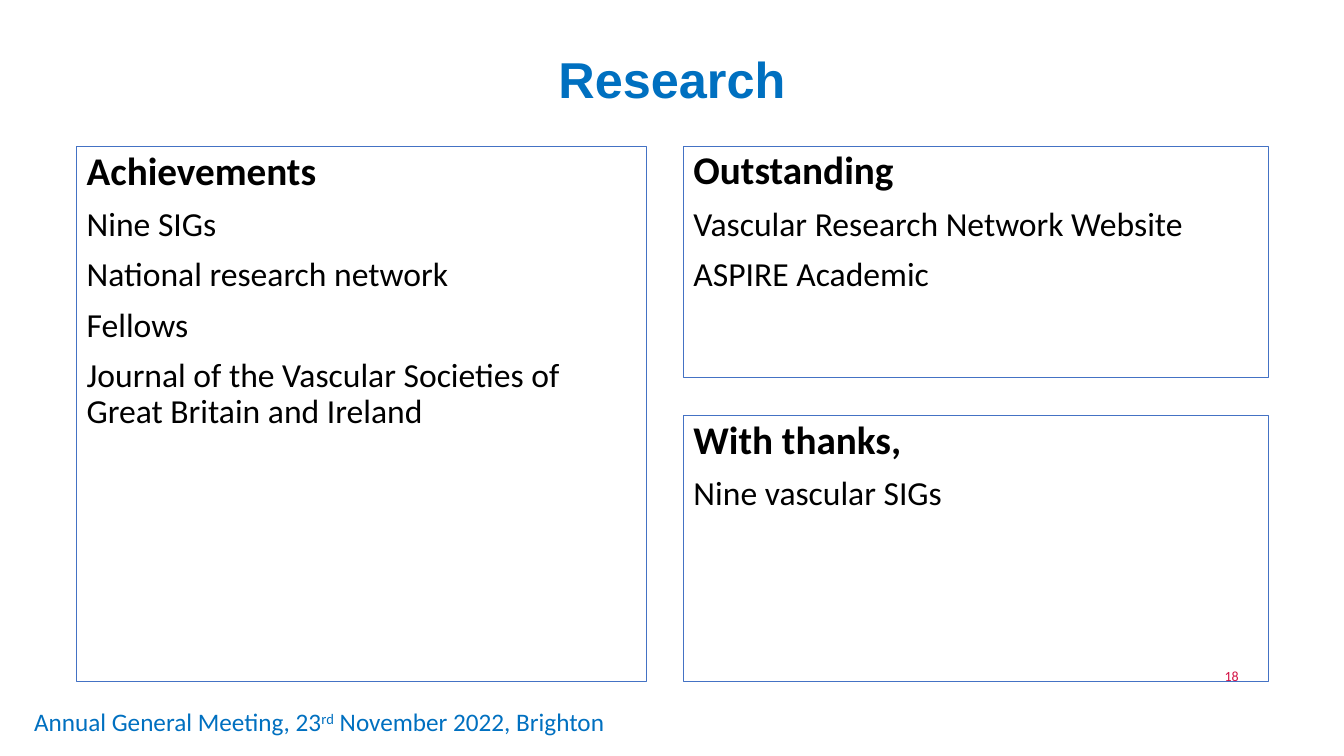
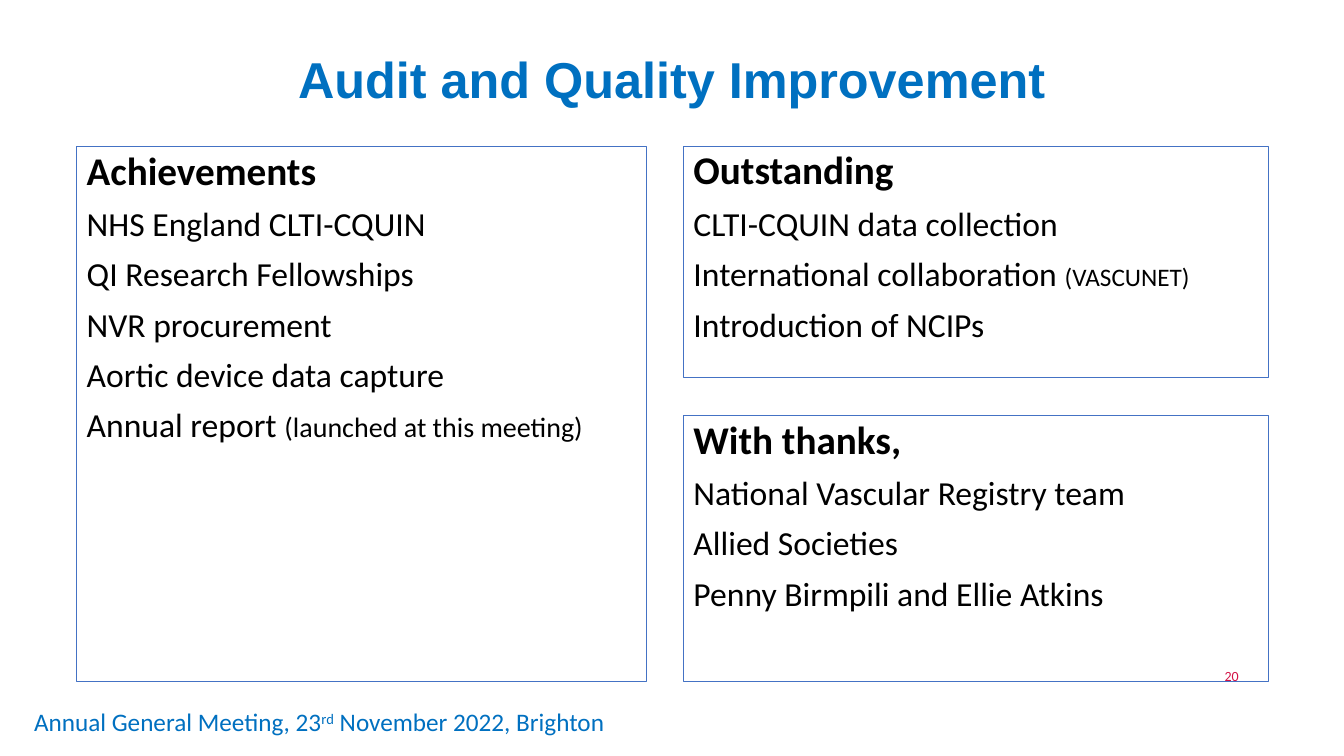
from lxml import etree
from pptx import Presentation
from pptx.dml.color import RGBColor
from pptx.enum.shapes import MSO_SHAPE
from pptx.enum.text import MSO_ANCHOR, MSO_AUTO_SIZE, PP_ALIGN
from pptx.oxml.ns import qn
from pptx.util import Emu, Pt

RECTANGLE = MSO_SHAPE.RECTANGLE
TOP, MIDDLE = MSO_ANCHOR.TOP, MSO_ANCHOR.MIDDLE
NO_FIT, GROW = MSO_AUTO_SIZE.NONE, MSO_AUTO_SIZE.SHAPE_TO_FIT_TEXT
LEFT, CENTER = PP_ALIGN.LEFT, PP_ALIGN.CENTER

BLUE = RGBColor(0x00, 0x70, 0xC0)
OUTLINE = RGBColor(0x44, 0x72, 0xC4)
RED = RGBColor(0xD3, 0x11, 0x45)
BLACK = RGBColor(0x00, 0x00, 0x00)

PX = 9144  # 100 px to the inch
PAGE_WIDTH, PAGE_HEIGHT = 1333, 750
PANEL_TOP, PANEL_BOTTOM, GAP = 145, 676, 37
LEFT_X, LEFT_WIDTH = 76, 565
RIGHT_X, RIGHT_WIDTH = LEFT_X + LEFT_WIDTH + GAP, 580
OUTSTANDING_HEIGHT = 230
THANKS_TOP = PANEL_TOP + OUTSTANDING_HEIGHT + GAP

ACHIEVEMENTS_AREA = (LEFT_X, PANEL_TOP, LEFT_WIDTH, PANEL_BOTTOM - PANEL_TOP)
OUTSTANDING_AREA = (RIGHT_X, PANEL_TOP, RIGHT_WIDTH, OUTSTANDING_HEIGHT)
THANKS_AREA = (RIGHT_X, THANKS_TOP, RIGHT_WIDTH, PANEL_BOTTOM - THANKS_TOP)


class ReportDeck:
    def __init__(self):
        self.deck = Presentation()
        self.deck.slide_width = Emu(PAGE_WIDTH * PX)
        self.deck.slide_height = Emu(PAGE_HEIGHT * PX)
        self.page = None

    def add_page(self, title, number):
        self.page = self.deck.slides.add_slide(self.deck.slide_layouts[1])
        self.add_number(number)
        self.add_footer()
        self.set_title(title)

    def place(self, box, area):
        box.left, box.top, box.width, box.height = (Emu(n * PX) for n in area)

    def add_text_box(self, area):
        return self.page.shapes.add_textbox(*(Emu(n * PX) for n in area))

    def prepare_frame(self, box, anchor=TOP, inset=None):
        """Fix wrapping, fit and anchor; an inset applies to all four sides."""
        frame = box.text_frame
        frame.word_wrap = True
        frame.auto_size = NO_FIT
        frame.vertical_anchor = anchor
        if inset is not None:
            frame.margin_left = frame.margin_right = Emu(inset * PX)
            frame.margin_top = frame.margin_bottom = Emu(inset * PX)
        return frame

    def add_span(self, para, text, size, color, bold=False, font="Calibri"):
        span = para.add_run()
        span.text = text
        span.font.name = font
        span.font.size = Pt(size)
        span.font.bold = bold
        span.font.color.rgb = color
        return span

    def set_title(self, text):
        title = self.page.shapes.title
        self.place(title, (51, 48, 1231, 78))
        para = self.prepare_frame(title, inset=0).paragraphs[0]
        para.alignment = CENTER
        self.add_span(para, text, 36, BLUE, bold=True, font="Arial")

    def add_number(self, number):
        box = self.add_text_box((1204, 657, 35, 28))
        para = self.prepare_frame(box, MIDDLE, 0).paragraphs[0]
        para.alignment = CENTER
        self.add_span(para, number, 10, RED)

    def add_footer(self):
        frame = self.add_text_box((24, 696, 594, 40)).text_frame
        frame.word_wrap = False
        frame.auto_size = GROW
        para = frame.paragraphs[0]
        self.add_span(para, "Annual General Meeting, 23", 18, BLUE)
        ordinal = self.add_span(para, "rd", 18, BLUE)
        ordinal.font._element.set("baseline", "30000")
        self.add_span(para, " November 2022, Brighton", 18, BLUE)

    def fill_panel(self, box, heading, items):
        """Outline a box and write its heading and items.

        An item is a text, or a tuple of text, smaller remark and remark size.
        """
        box.line.color.rgb = OUTLINE
        box.line.width = Pt(0.75)
        frame = self.prepare_frame(box)
        para = self.format_para(frame.paragraphs[0], 0)
        self.add_span(para, heading, 28, BLACK, bold=True)
        for item in items:
            text, *remark = (item,) if isinstance(item, str) else item
            para = self.format_para(frame.add_paragraph(), 10)
            self.add_span(para, text, 24, BLACK)
            if remark:
                self.add_span(para, *remark, BLACK)

    def format_para(self, para, space_before):
        properties = para._p.get_or_add_pPr()
        properties.set("marL", "0")
        properties.set("indent", "0")
        etree.SubElement(properties, qn("a:buNone"))
        para.alignment = LEFT
        para.line_spacing = 0.9
        para.space_before = Pt(space_before)
        return para

    def add_body(self, area, heading, items):
        body = self.page.placeholders[1]
        self.place(body, area)
        self.fill_panel(body, heading, items)

    def add_panel(self, area, heading, items):
        box = self.page.shapes.add_shape(RECTANGLE, *(Emu(n * PX) for n in area))
        box.shadow.inherit = False
        box.fill.background()
        self.fill_panel(box, heading, items)

    def save(self):
        self.deck.save("out.pptx")


REPORTS = [
    {
        "title": "Research",
        "number": "18",
        "achievements": [
            "Nine SIGs",
            "National research network",
            "Fellows",
            "Journal of the Vascular Societies of Great Britain and Ireland",
        ],
        "outstanding": ["Vascular Research Network Website", "ASPIRE Academic"],
        "thanks": ["Nine vascular SIGs"],
    },
    {
        "title": "Audit and Quality Improvement",
        "number": "20",
        "achievements": [
            "NHS England CLTI-CQUIN",
            "QI Research Fellowships",
            "NVR procurement",
            "Aortic device data capture",
            ("Annual report ", "(launched at this meeting)", 20),
        ],
        "outstanding": [
            "CLTI-CQUIN data collection",
            ("International collaboration ", "(VASCUNET)", 18),
            "Introduction of NCIPs",
        ],
        "thanks": [
            "National Vascular Registry team",
            "Allied Societies",
            "Penny Birmpili and Ellie Atkins",
        ],
    },
]


def main():
    deck = ReportDeck()
    for report in REPORTS:
        deck.add_page(report["title"], report["number"])
        deck.add_body(ACHIEVEMENTS_AREA, "Achievements", report["achievements"])
        deck.add_panel(OUTSTANDING_AREA, "Outstanding", report["outstanding"])
        deck.add_panel(THANKS_AREA, "With thanks,", report["thanks"])
    deck.save()


if __name__ == "__main__":
    main()
